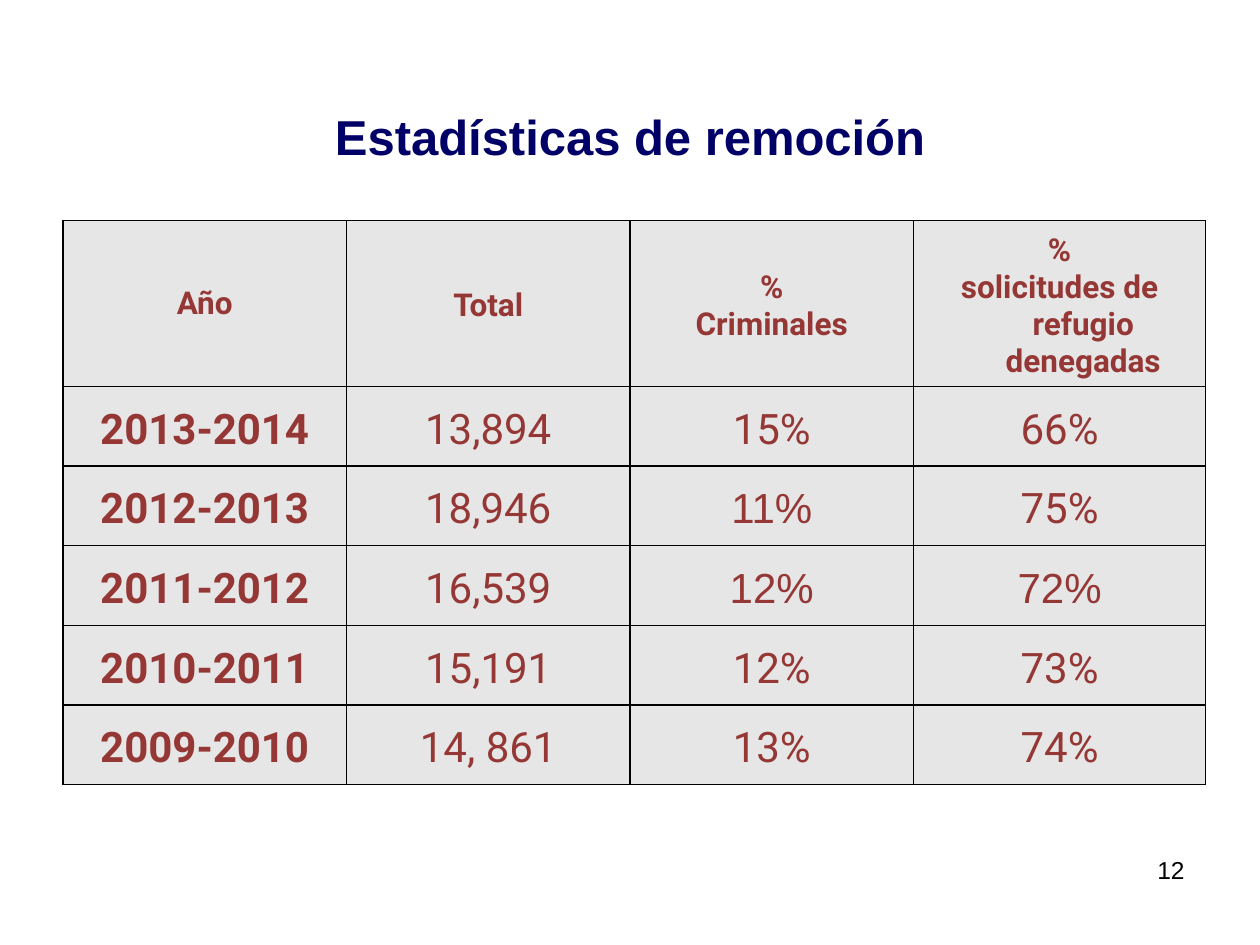
from lxml import etree
from pptx import Presentation
from pptx.dml.color import RGBColor
from pptx.enum.text import MSO_ANCHOR, PP_ALIGN
from pptx.oxml.ns import qn
from pptx.util import Pt

MIDDLE = MSO_ANCHOR.MIDDLE
CENTER, RIGHT = PP_ALIGN.CENTER, PP_ALIGN.RIGHT

COLORS = {"title": "000066", "text": "953735", "cell": "E6E6E6", "black": "000000"}

TITLE = "Estadísticas de remoción"
PAGE_NUMBER = "12"
HEADERS = [["Año"], ["Total"], ["%", "Criminales"],
           ["%", "solicitudes de refugio denegadas"]]
ROWS = [
    ["2013-2014", "13,894", "15%", "66%"],
    ["2012-2013", "18,946", "11%", "75%"],
    ["2011-2012", "16,539", "12%", "72%"],
    ["2010-2011", "15,191", "12%", "73%"],
    ["2009-2010", "14, 861", "13%", "74%"],
]
ARIAL_CELLS = {(2, 2), (3, 2), (3, 3)}  # (row, column)

COLUMN_WIDTHS = [162, 162, 162, 167]
HEADER_HEIGHT, ROW_HEIGHT = 92.2, 45.5
INDENT = 27


def add_text(para, text, size, color, font="Arial", bold=False, align=CENTER):
    para.alignment = align
    span = para.add_run()
    span.text = text
    span.font.name = font
    span.font.size = Pt(size)
    span.font.bold = bold
    span.font.color.rgb = RGBColor.from_string(COLORS[color])


def add_borders(cell):
    properties = cell._tc.get_or_add_tcPr()
    for side in ("a:lnL", "a:lnR", "a:lnT", "a:lnB"):
        line = etree.SubElement(properties, qn(side), w=str(Pt(1)))
        fill = etree.SubElement(line, qn("a:solidFill"))
        etree.SubElement(fill, qn("a:srgbClr"), val=COLORS["black"])


def fill_cell(cell, lines, size, font, bold, first_spacing):
    add_borders(cell)
    cell.fill.solid()
    cell.fill.fore_color.rgb = RGBColor.from_string(COLORS["cell"])
    cell.vertical_anchor = MIDDLE
    frame = cell.text_frame
    for number, text in enumerate(lines):
        para = frame.add_paragraph() if number else frame.paragraphs[0]
        properties = para._p.get_or_add_pPr()
        properties.set("marL", str(Pt(INDENT)))
        properties.set("indent", str(Pt(-INDENT)))
        para.line_spacing = 1.0 if number else first_spacing
        add_text(para, text, size, "text", font, bold)


def add_statistics(page):
    heights = [HEADER_HEIGHT] + [ROW_HEIGHT] * len(ROWS)
    table = page.shapes.add_table(
        len(heights), len(COLUMN_WIDTHS), Pt(36), Pt(126),
        Pt(sum(COLUMN_WIDTHS)), Pt(sum(heights))).table
    for column, width in zip(table.columns, COLUMN_WIDTHS):
        column.width = Pt(width)
    for row, height in zip(table.rows, heights):
        row.height = Pt(height)

    for c, lines in enumerate(HEADERS):
        fill_cell(table.cell(0, c), lines, 18, "Roboto", True, 1.15 if c else 1.0)
    for r, values in enumerate(ROWS, start=1):
        for c, value in enumerate(values):
            font = "Arial" if (r, c) in ARIAL_CELLS else "Roboto"
            fill_cell(table.cell(r, c), [value], 24, font, c == 0, 1.15)


def main():
    deck = Presentation()
    deck.slide_width, deck.slide_height = Pt(720), Pt(540)
    page = deck.slides.add_slide(deck.slide_layouts[5])

    title = page.shapes.title
    title.left, title.top, title.width, title.height = Pt(36), Pt(54.7), Pt(648), Pt(46)
    title.text_frame.vertical_anchor = MIDDLE
    add_text(title.text_frame.paragraphs[0], TITLE, 28, "title", bold=True)

    add_statistics(page)

    number_box = page.shapes.add_textbox(Pt(516), Pt(485.3), Pt(168), Pt(37.5))
    number_box.text_frame.word_wrap = True
    add_text(number_box.text_frame.paragraphs[0], PAGE_NUMBER, 14, "black", align=RIGHT)

    deck.save("out.pptx")


if __name__ == "__main__":
    main()
